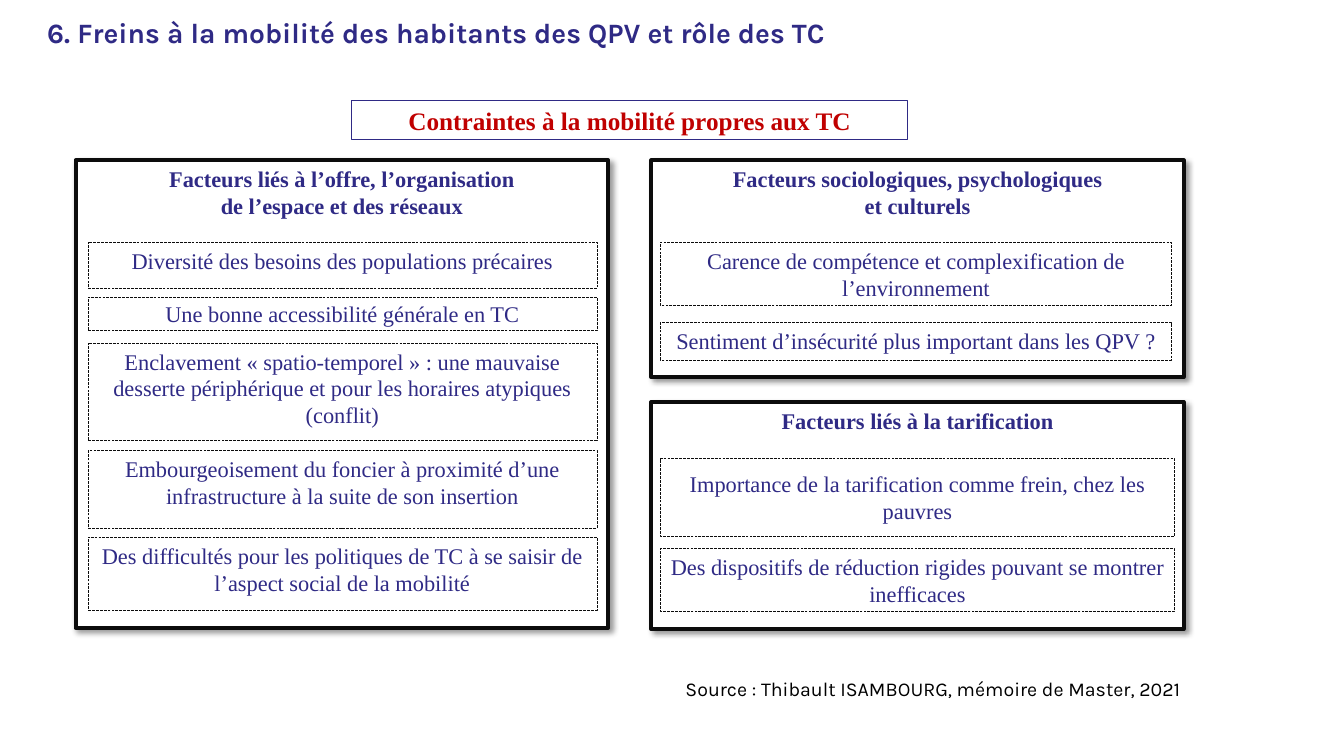
"""Build the slide on mobility barriers and public transport."""
from dataclasses import dataclass

from lxml.etree import SubElement
from pptx import Presentation
from pptx.dml.color import RGBColor
from pptx.enum.dml import MSO_LINE
from pptx.enum.shapes import MSO_SHAPE
from pptx.enum.text import MSO_ANCHOR, PP_ALIGN
from pptx.oxml.ns import qn
from pptx.shapes.autoshape import Shape
from pptx.slide import Slide
from pptx.util import Emu, Pt

EMU_PER_PX = 9144


@dataclass(frozen=True)
class Theme:
    indigo: str = "2F2A85"
    red: str = "C00000"
    ink: str = "0C0C0C"
    black: str = "000000"
    white: str = "FFFFFF"
    sans: str = "Karla"
    serif: str = "Times New Roman"
    title_size: int = 20
    banner_size: int = 18
    body_size: int = 16
    source_size: int = 14


@dataclass(frozen=True)
class Box:
    left: int
    top: int
    width: int
    height: int


@dataclass(frozen=True)
class Factor:
    text: str
    top: int
    height: int
    anchor: MSO_ANCHOR = MSO_ANCHOR.TOP


@dataclass(frozen=True)
class Panel:
    heading: str
    box: Box
    factor_left: int
    factor_width: int
    factors: tuple[Factor, ...]


THEME = Theme()
PANELS = (
    Panel("Facteurs liés à l’offre, l’organisation\vde l’espace et des réseaux",
          Box(75, 159, 528, 464), 87, 505, (
              Factor("Diversité des besoins des populations précaires", 240, 46),
              Factor("Une bonne accessibilité générale en TC", 295, 33, MSO_ANCHOR.MIDDLE),
              Factor("Enclavement « spatio-temporel » : une mauvaise desserte "
                     "périphérique et pour les horaires atypiques (conflit)", 340, 97),
              Factor("Embourgeoisement du foncier à proximité d’une infrastructure "
                     "à la suite de son insertion", 447, 77),
              Factor("Des difficultés pour les politiques de TC à se saisir de "
                     "l’aspect social de la mobilité", 533, 72))),
    Panel("Facteurs liés à la tarification",
          Box(646, 399, 528, 225), 655, 510, (
              Factor("Importance de la tarification comme frein, chez les pauvres",
                     455, 77, MSO_ANCHOR.MIDDLE),
              Factor("Des dispositifs de réduction rigides pouvant se montrer "
                     "inefficaces", 544, 62))),
    Panel("Facteurs sociologiques, psychologiques\vet culturels",
          Box(646, 159, 528, 215), 655, 507, (
              Factor("Carence de compétence et complexification de "
                     "l’environnement", 240, 63),
              Factor("Sentiment d’insécurité plus important dans les QPV ?", 320, 37))),
)


def px(length: int) -> Emu:
    """Turn pixels into EMU."""
    return Emu(length * EMU_PER_PX)


def place(box: Box) -> tuple[Emu, Emu, Emu, Emu]:
    """Give the box as left, top, width and height in EMU."""
    return px(box.left), px(box.top), px(box.width), px(box.height)


def write(shape: Shape, text: str, *, size: int = THEME.body_size,
          font: str = THEME.serif, color: str = THEME.indigo, bold: bool = False,
          align: PP_ALIGN = PP_ALIGN.CENTER,
          anchor: MSO_ANCHOR = MSO_ANCHOR.TOP) -> None:
    """Write formatted text into a shape."""
    frame = shape.text_frame
    frame.word_wrap = True
    frame.vertical_anchor = anchor
    paragraph = frame.paragraphs[0]
    paragraph.text = text
    paragraph.alignment = align
    for run in paragraph.runs:
        run.font.size = Pt(size)
        run.font.name = font
        run.font.bold = bold
        run.font.color.rgb = RGBColor.from_string(color)
    for line_break in paragraph._p.findall(qn("a:br")):
        SubElement(line_break, qn("a:rPr"), sz=str(size * 100))


def add_frame(slide: Slide, box: Box, line_color: str, line_width: float) -> Shape:
    """Add a white outlined rectangle."""
    frame = slide.shapes.add_shape(MSO_SHAPE.RECTANGLE, *place(box))
    frame.shadow.inherit = False
    frame.fill.solid()
    frame.fill.fore_color.rgb = RGBColor.from_string(THEME.white)
    frame.line.color.rgb = RGBColor.from_string(line_color)
    frame.line.width = Pt(line_width)
    return frame


def cast_shadow(shape: Shape) -> None:
    """Give a shape a soft shadow to the lower right."""
    effects = shape._element.spPr.find(qn("a:effectLst"))
    shadow = SubElement(effects, qn("a:outerShdw"), blurRad=str(Pt(4)),
                        dist=str(Pt(3)), dir="2700000", algn="tl", rotWithShape="0")
    color = SubElement(shadow, qn("a:srgbClr"), val=THEME.black)
    SubElement(color, qn("a:alpha"), val="40000")


def add_panel(slide: Slide, panel: Panel) -> None:
    """Add a headed panel with its dashed factor boxes."""
    border = add_frame(slide, panel.box, THEME.ink, 3)
    cast_shadow(border)
    write(border, panel.heading, bold=True)
    for factor in panel.factors:
        box = Box(panel.factor_left, factor.top, panel.factor_width, factor.height)
        dashed = add_frame(slide, box, THEME.ink, 0.25)
        dashed.line.dash_style = MSO_LINE.LONG_DASH
        write(dashed, factor.text, anchor=factor.anchor)


def main() -> None:
    """Build and save the slide."""
    deck = Presentation()
    deck.slide_width, deck.slide_height = px(1333), px(750)
    slide = deck.slides.add_slide(deck.slide_layouts[6])

    title = slide.shapes.add_textbox(*place(Box(37, 10, 930, 58)))
    write(title, "6. Freins à la mobilité des habitants des QPV et rôle des TC",
          size=THEME.title_size, font=THEME.sans, bold=True, align=PP_ALIGN.LEFT)

    banner = add_frame(slide, Box(349, 100, 551, 38), THEME.indigo, 0.75)
    write(banner, "Contraintes à la mobilité propres aux TC",
          size=THEME.banner_size, color=THEME.red, bold=True)

    for panel in PANELS:
        add_panel(slide, panel)

    source = slide.shapes.add_textbox(*place(Box(670, 667, 530, 34)))
    write(source, "Source : Thibault ISAMBOURG, mémoire de Master, 2021",
          size=THEME.source_size, font=THEME.sans, color=THEME.black,
          align=PP_ALIGN.LEFT)

    deck.save("out.pptx")


if __name__ == "__main__":
    main()
